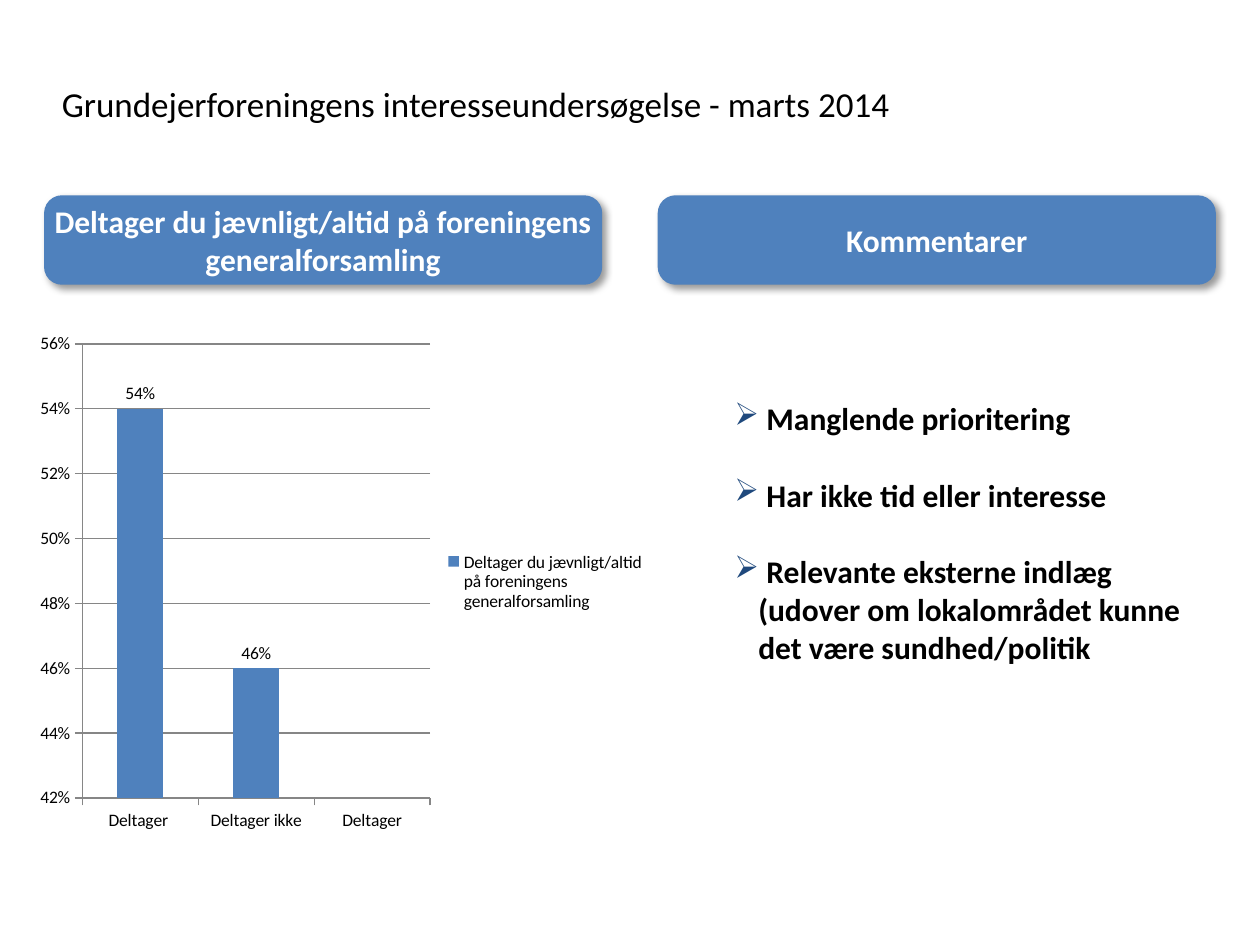
from lxml.etree import SubElement
from pptx import Presentation
from pptx.chart.data import CategoryChartData
from pptx.dml.color import RGBColor
from pptx.enum.chart import XL_CHART_TYPE, XL_LABEL_POSITION, XL_LEGEND_POSITION, XL_TICK_MARK
from pptx.enum.shapes import MSO_SHAPE
from pptx.enum.text import MSO_ANCHOR, PP_ALIGN
from pptx.oxml import parse_xml
from pptx.oxml.ns import nsdecls, qn
from pptx.util import Inches, Pt

COLORS = {
    "text": "000000",
    "white": "FFFFFF",
    "accent": "4F81BD",
    "bullet": "1F497D",
    "grid": "868686",
}
QUESTION = "Deltager du jævnligt/altid på foreningens generalforsamling"
COMMENTS = [
    "Manglende prioritering",
    "Har ikke tid eller interesse",
    "Relevante eksterne indlæg (udover om lokalområdet kunne det være sundhed/politik",
]


class SlideBuilder:
    font_name = "Calibri"

    def __init__(self, slide):
        self.slide = slide

    def color(self, name):
        return RGBColor.from_string(COLORS[name])

    def apply(self, target, **values):
        for name, value in values.items():
            setattr(target, name, value)

    def style(self, font, size, color="text", bold=False):
        self.apply(font, name=self.font_name, size=Pt(size), bold=bold)
        font.color.rgb = self.color(color)

    def title(self, text, left, top, width, height):
        shape = self.slide.shapes.title
        self.apply(shape, left=Inches(left), top=Inches(top),
                   width=Inches(width), height=Inches(height))
        frame = shape.text_frame
        self.apply(frame, text=text, vertical_anchor=MSO_ANCHOR.MIDDLE, word_wrap=True)
        paragraph = frame.paragraphs[0]
        paragraph.alignment = PP_ALIGN.LEFT
        self.style(paragraph.runs[0].font, 20)

    def header(self, text, left, top, width, height):
        shape = self.slide.shapes.add_shape(
            MSO_SHAPE.ROUNDED_RECTANGLE, Inches(left), Inches(top), Inches(width), Inches(height))
        shape.adjustments[0] = 0.2
        shape.fill.solid()
        shape.fill.fore_color.rgb = self.color("accent")
        shape.line.fill.background()
        self.add_shadow(shape)
        frame = shape.text_frame
        margin = Inches(0.04)
        self.apply(frame, text=text, word_wrap=True, vertical_anchor=MSO_ANCHOR.MIDDLE,
                   margin_left=margin, margin_right=margin, margin_top=margin, margin_bottom=margin)
        paragraph = frame.paragraphs[0]
        paragraph.alignment = PP_ALIGN.CENTER
        self.style(paragraph.runs[0].font, 18, "white", True)

    def add_shadow(self, shape):
        shape.shadow.inherit = False
        effects = shape.element.spPr.find(qn("a:effectLst"))
        effects.append(parse_xml(
            f'<a:outerShdw {nsdecls("a")} blurRad="{Pt(4)}" dist="{Pt(3)}" dir="{45 * 60000}" '
            f'algn="tl" rotWithShape="0"><a:srgbClr val="{COLORS["text"]}">'
            '<a:alpha val="40000"/></a:srgbClr></a:outerShdw>'))

    def bullets(self, items, left, top, width, height):
        frame = self.slide.shapes.add_textbox(
            Inches(left), Inches(top), Inches(width), Inches(height)).text_frame
        frame.word_wrap = True
        for index, item in enumerate(items):
            paragraph = frame.paragraphs[0] if index == 0 else frame.add_paragraph()
            paragraph.space_before = Pt(22 if index else 0)
            run = paragraph.add_run()
            run.text = f" {item}"
            self.style(run.font, 18, bold=True)
            self.add_bullet(paragraph, "➢", 0.19)

    def add_bullet(self, paragraph, character, indent):
        properties = paragraph._p.get_or_add_pPr()
        properties.set("marL", str(Inches(indent)))
        properties.set("indent", str(-Inches(indent)))
        bullet_color = SubElement(properties, qn("a:buClr"))
        SubElement(bullet_color, qn("a:srgbClr"), val=COLORS["bullet"])
        SubElement(properties, qn("a:buChar"), char=character)

    def column_chart(self, name, categories, values, left, top, width, height):
        data = CategoryChartData(number_format="0%")
        data.categories = categories
        data.add_series(name, values)
        chart = self.slide.shapes.add_chart(
            XL_CHART_TYPE.COLUMN_CLUSTERED, Inches(left), Inches(top),
            Inches(width), Inches(height), data).chart
        self.style(chart.font, 10)
        self.apply(chart, has_title=False, has_legend=True)
        self.apply(chart.legend, position=XL_LEGEND_POSITION.RIGHT, include_in_layout=False)
        plot = chart.plots[0]
        self.apply(plot, gap_width=150, vary_by_categories=False, has_data_labels=True)
        self.apply(plot.data_labels, show_value=True, number_format="0%",
                   number_format_is_linked=False, position=XL_LABEL_POSITION.OUTSIDE_END)
        series = plot.series[0]
        series.format.fill.solid()
        series.format.fill.fore_color.rgb = self.color("accent")
        value_axis = chart.value_axis
        self.apply(value_axis, minimum_scale=0.42, maximum_scale=0.56, major_unit=0.02,
                   has_major_gridlines=True)
        self.apply(value_axis.tick_labels, number_format="0%", number_format_is_linked=False)
        for axis in (chart.category_axis, value_axis):
            axis.major_tick_mark = XL_TICK_MARK.OUTSIDE
        for part in (chart.category_axis, value_axis, value_axis.major_gridlines):
            part.format.line.color.rgb = self.color("grid")
            part.format.line.width = Pt(0.75)


def main():
    presentation = Presentation()
    presentation.slide_width = Inches(10)
    presentation.slide_height = Inches(7.5)
    builder = SlideBuilder(presentation.slides.add_slide(presentation.slide_layouts[5]))
    builder.title("Grundejerforeningens interesseundersøgelse - marts 2014", 0.39, 0.37, 8.54, 0.9)
    builder.bullets(COMMENTS, 5.73, 3.12, 3.92, 2.22)
    for text, left in ((QUESTION, 0.35), ("Kommentarer", 5.22)):
        builder.header(text, left, 1.55, 4.43, 0.71)
    builder.column_chart(QUESTION, ["Deltager ", "Deltager ikke", "Deltager"],
                         [0.54, 0.46, None], 0.22, 2.57, 5, 4.1)
    presentation.save("out.pptx")


if __name__ == "__main__":
    main()
